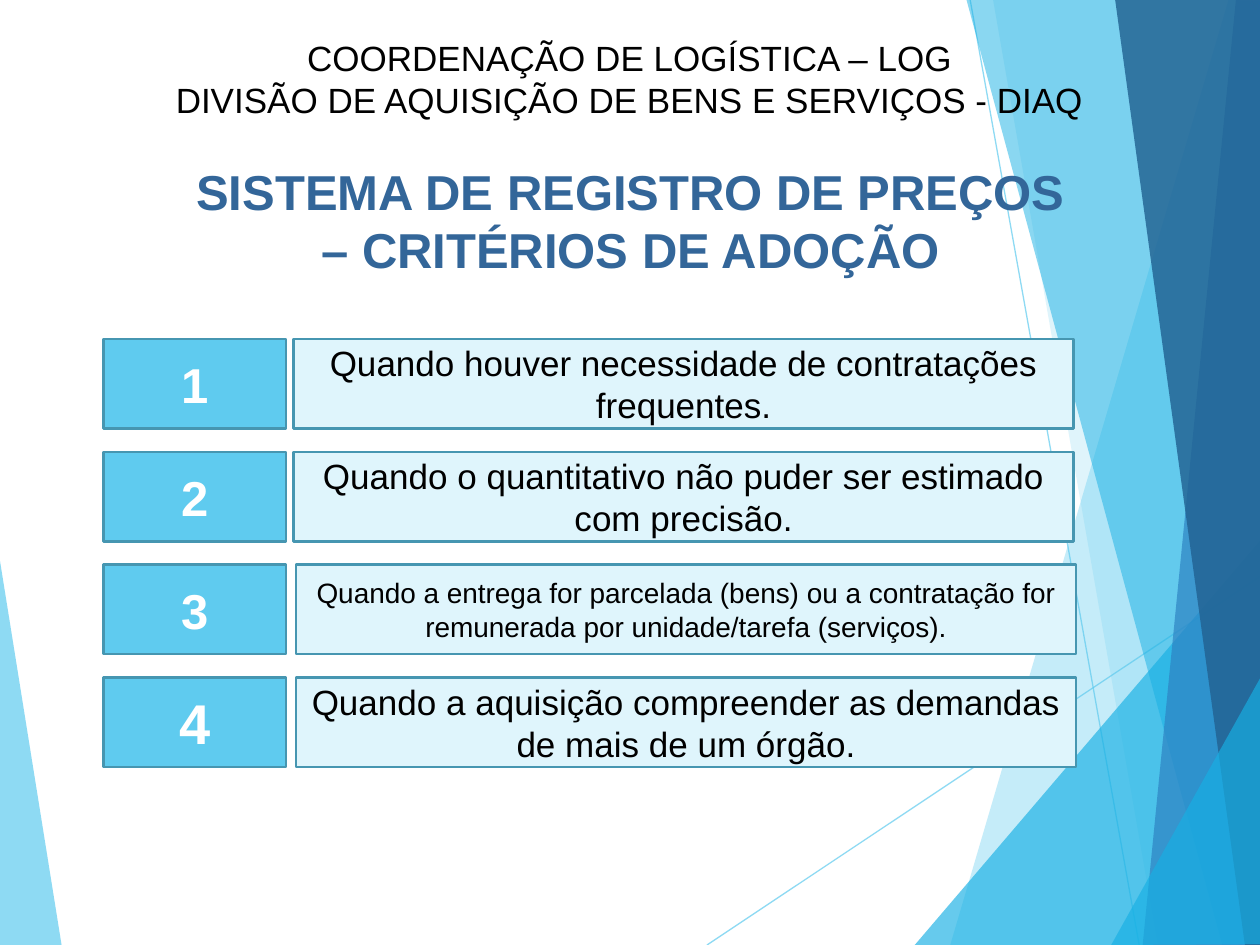
from lxml import etree
from pptx import Presentation
from pptx.dml.color import RGBColor
from pptx.enum.shapes import MSO_CONNECTOR, MSO_SHAPE
from pptx.enum.text import MSO_ANCHOR, PP_ALIGN
from pptx.oxml.ns import qn
from pptx.util import Pt

RECT = MSO_SHAPE.RECTANGLE
STRAIGHT = MSO_CONNECTOR.STRAIGHT
MIDDLE, CENTER = MSO_ANCHOR.MIDDLE, PP_ALIGN.CENTER

THEME = {
    "font": "Arial",
    "sky": "5FCBEF", "cyan": "17B0E4", "blue": "2E83C3", "navy": "226292",
    "pale": "DFF5FC", "border": "4696B1",
    "title": "336699", "black": "000000", "white": "FFFFFF",
    "title_size": 28, "body_size": 20, "small_size": 16,
    "number_size": 28, "big_number_size": 32,
}


def set_color(fill, name, alpha=100):
    fill.solid()
    fill.fore_color.rgb = RGBColor.from_string(THEME[name])
    if alpha < 100:
        clr = fill._xPr.find(qn("a:solidFill"))[0]
        etree.SubElement(clr, qn("a:alpha"), val=str(alpha * 1000))


def write(sp, lines, size, color, bold=False):
    tf = sp.text_frame
    tf.word_wrap = True
    for i, text in enumerate(lines):
        p = tf.add_paragraph() if i else tf.paragraphs[0]
        p.alignment = CENTER
        r = p.add_run()
        r.text = text
        fmt = {"name": THEME["font"], "size": Pt(THEME[size]), "bold": bold}
        for key, value in fmt.items():
            setattr(r.font, key, value)
        set_color(r.font.fill, color)


prs = Presentation()
prs.slide_width, prs.slide_height = Pt(720), Pt(540)
s = prs.slides.add_slide(prs.slide_layouts[6])

# Background facets: colour, opacity, corners
left_facet = ("sky", 70, [(-0.7, 316), (35.3, 540.5), (-0.7, 540)])
right_facets = [
    ("sky", 36, [(702, 0), (543, 540), (721, 540.5), (720.5, 0.5)]),
    ("sky", 20, [(567.4, -0.5), (661.7, 540), (720.7, 540), (720.7, -0.5)]),
    ("cyan", 66, [(522.7, 540), (720, 309), (720.7, 540)]),
    ("cyan", 50, [(552.2, -0.5), (698.4, 540), (720.7, 539.5), (720.7, -0.5)]),
    ("blue", 70, [(706.3, -0.5), (653, 540), (720.7, 540), (720, -0.5)]),
    ("navy", 82, [(637.2, -0.5), (711.4, 540), (721.4, 540), (720, -0.5)]),
    ("cyan", 66, [(635, 540), (721.4, 385.2), (721.4, 539.5)]),
]
for i, (color, alpha, corners) in enumerate([left_facet] + right_facets):
    points = [(Pt(x), Pt(y)) for x, y in corners]
    fb = s.shapes.build_freeform(*points[0], scale=1.0)
    fb.add_line_segments(points[1:], close=True)
    sp = fb.convert_to_shape()
    sp.shadow.inherit = False
    set_color(sp.fill, color, alpha)
    sp.line.fill.background()

    # Thin lines lie between the left facet and the right ones
    if i == 0:
        for ends in [(404, 540, 720.7, 329), (554.4, 0, 651, 540)]:
            line = s.shapes.add_connector(STRAIGHT, *map(Pt, ends))
            line.line.width = Pt(0.75)
            set_color(line.line.fill, "sky", 70)
            etree.SubElement(line._element.spPr, qn("a:effectLst"))

# Title and department heading
title = s.shapes.add_textbox(Pt(42.5), Pt(88.5), Pt(635.5), Pt(75.6))
write(title, ["SISTEMA DE REGISTRO DE PREÇOS", "– CRITÉRIOS DE ADOÇÃO"],
      "title_size", "title", bold=True)
heading = s.shapes.add_textbox(Pt(90), Pt(17.3), Pt(539.5), Pt(55.5))
write(heading, ["COORDENAÇÃO DE LOGÍSTICA – LOG",
                "DIVISÃO DE AQUISIÇÃO DE BENS E SERVIÇOS - DIAQ"],
      "body_size", "black")

# Numbered criteria: number size, left of the text box, text size, text
criteria = [
    ("number_size", 167.8, "body_size",
     "Quando houver necessidade de contratações frequentes."),
    ("number_size", 167.8, "body_size",
     "Quando o quantitativo não puder ser estimado com precisão."),
    ("number_size", 169.2, "small_size",
     "Quando a entrega for parcelada (bens) ou a contratação for "
     "remunerada por unidade/tarefa (serviços)."),
    ("big_number_size", 169.2, "body_size",
     "Quando a aquisição compreender as demandas de mais de um órgão."),
]
TOP, PITCH, HEIGHT = 193.7, 64.5, 51.1
for i, (number_size, text_left, text_size, text) in enumerate(criteria):
    boxes = [
        (59, 104.5, "sky", str(i + 1), number_size, "white", True),
        (text_left, 445.7, "pale", text, text_size, "black", False),
    ]
    for left, width, fill, words, size, color, bold in boxes:
        sp = s.shapes.add_shape(RECT, Pt(left), Pt(TOP + i * PITCH),
                                Pt(width), Pt(HEIGHT))
        sp.shadow.inherit = False
        set_color(sp.fill, fill)
        set_color(sp.line.fill, "border")
        sp.line.width = Pt(1.5)
        sp.text_frame.vertical_anchor = MIDDLE
        write(sp, [words], size, color, bold)

prs.save("out.pptx")
